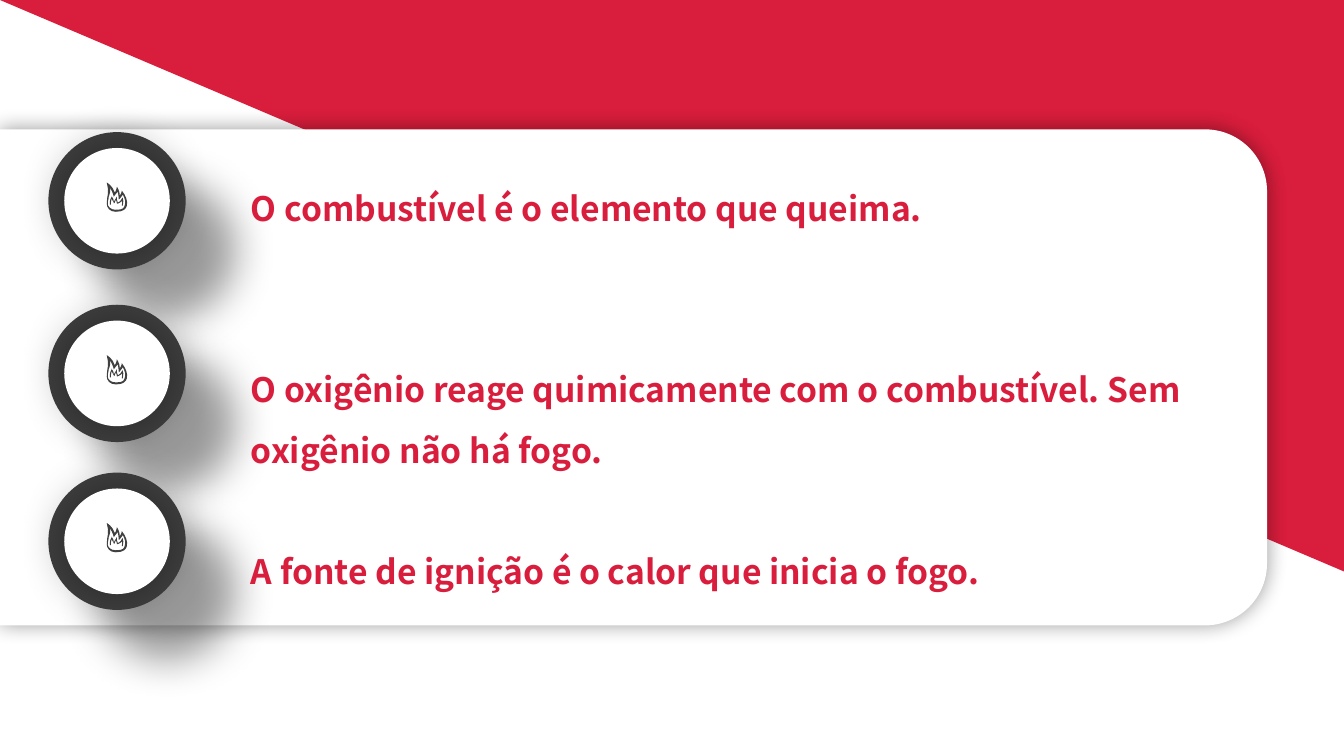
from lxml import etree
from pptx import Presentation
from pptx import util as u
from pptx.dml.color import RGBColor
from pptx.enum import shapes, text
from pptx.oxml import ns

RED, DARK, WHITE = "D91D3C", "404040", "FFFFFF"
FONT = "Noto Sans CJK SC"
WIDTH, HEIGHT = u.Cm(33.87), u.Cm(19.05)
FLAME_UNIT = u.Cm(2.54) / 100

# Each statement with the space above it in points
STATEMENTS = [
    ("O combustível é o elemento que queima.", 0),
    ("O oxigênio reage quimicamente com o combustível. Sem oxigênio não há fogo.", 86.4),
    ("A fonte de ignição é o calor que inicia o fogo.", 43.2),
]
BADGE_TOPS = [3.33, 7.68, 11.91]

# Flame outlines in flame units: pairs are line ends, sixes are curves
FLAME_OUTSIDE = [
    (15, 8), (15, 10, 13, 13, 13, 13), (13, 8, 10, 4, 10, 4),
    (10, 4, 10, 7, 8, 10), (6, 3, 0, 0, 0, 0), (3, 10, 0, 13, 0, 21),
    (0, 25, 3, 29, 9, 29), (17, 29, 19, 26, 20, 23), (21, 18, 19, 13, 15, 8)]
FLAME_INSIDE = [
    (18, 22), (17, 25, 17, 27, 9, 27), (4, 27, 1, 24, 1, 21),
    (1, 18, 2, 16, 2, 14), (3, 11, 4, 9, 3, 5), (6, 9, 7, 14, 7, 14),
    (7, 14, 10, 10, 11, 9), (11, 10, 12, 14, 12, 17), (12, 17, 14, 15, 16, 12),
    (18, 16, 19, 19, 18, 22)]
FLAME_CORE = [
    (16, 15), (15, 16), (14, 18, 13, 19, 11, 20), (11, 19, 10, 18, 10, 16),
    (10, 14), (9, 16), (8, 17, 8, 18, 7, 19), (7, 17, 6, 15, 5, 14), (5, 13),
    (5, 14), (4, 16, 3, 17, 3, 22), (3, 22, 4, 22, 4, 22),
    (4, 18, 5, 17, 5, 15), (5, 17, 6, 18, 7, 20), (7, 21), (8, 20),
    (8, 19, 9, 18, 9, 17), (10, 19, 10, 20, 10, 21), (11, 21),
    (13, 20, 15, 19, 15, 18), (16, 19, 15, 21, 15, 23), (16, 23),
    (16, 21, 17, 19, 16, 16), (16, 16, 16, 15, 16, 15)]


def color(hex_string):
    return RGBColor.from_string(hex_string)


def paint(part, fill):
    part.shadow.inherit = False
    part.fill.solid()
    part.fill.fore_color.rgb = color(fill)
    part.line.fill.background()
    return part


def add_part(slide, kind, left, top, width, height, fill):
    return paint(slide.shapes.add_shape(kind, left, top, width, height), fill)


def cast_shadow(part, blur, distance=0, angle=0):
    effects = part._element.spPr.find(ns.qn("a:effectLst"))
    shadow = etree.SubElement(
        effects, ns.qn("a:outerShdw"), blurRad=str(u.Pt(blur)),
        dist=str(u.Pt(distance)), dir=str(angle * 60000), algn="ctr", rotWithShape="0")
    black = etree.SubElement(shadow, ns.qn("a:srgbClr"), val="000000")
    etree.SubElement(black, ns.qn("a:alpha"), val="40000")


def trace(segments, steps=4):
    """Turn lines and cubic curves into outline points."""
    points = [segments[0]]
    for segment in segments[1:]:
        if len(segment) == 2:
            points.append(segment)
            continue
        controls = [points[-1], segment[:2], segment[2:4], segment[4:]]
        for step in range(1, steps + 1):
            t = step / steps
            weights = [(1 - t) ** 3, 3 * t * (1 - t) ** 2, 3 * t * t * (1 - t), t ** 3]
            points.append(tuple(
                sum(w * c[axis] for w, c in zip(weights, controls)) for axis in (0, 1)))
    return [(x * FLAME_UNIT, y * FLAME_UNIT) for x, y in points]


def add_outline(slide, left, top, contours):
    first, *others = [trace(contour) for contour in contours]
    builder = slide.shapes.build_freeform(*first[0])
    builder.add_line_segments(first[1:], close=True)
    for contour in others:
        builder.move_to(*contour[0])
        builder.add_line_segments(contour[1:], close=True)
    paint(builder.convert_to_shape(left, top), DARK)


def add_backdrop(slide, width, height):
    add_part(slide, shapes.MSO_SHAPE.RECTANGLE, 0, 0, width, height, WHITE)
    # Red wedge with its square corner at the top right
    wedge = add_part(slide, shapes.MSO_SHAPE.RIGHT_TRIANGLE, 0, 0, width, u.Cm(14.4), RED)
    wedge.rotation = 180


def add_panel(slide, left, top, width, height):
    # A quarter turn puts the two rounded corners on the right
    panel = add_part(
        slide, shapes.MSO_SHAPE.ROUND_2_SAME_RECTANGLE,
        left + (width - height) // 2, top + (height - width) // 2, height, width, WHITE)
    panel.rotation = 90
    panel.adjustments[0] = 0.125
    cast_shadow(panel, 15)


def add_badge(slide, left, top, size):
    rim = u.Cm(0.4)
    ring = add_part(slide, shapes.MSO_SHAPE.OVAL, left, top, size, size, DARK)
    cast_shadow(ring, 30, 50, 45)
    disc = add_part(slide, shapes.MSO_SHAPE.OVAL, left + rim, top + rim,
                    size - 2 * rim, size - 2 * rim, WHITE)
    cast_shadow(disc, 35)
    # Flame icon
    flame_left, flame_top = left + u.Cm(1.47), top + u.Cm(1.27)
    add_outline(slide, flame_left, flame_top, [FLAME_INSIDE, FLAME_OUTSIDE])
    add_outline(slide, flame_left, flame_top, [FLAME_CORE])


def add_statements(slide, left, top, width, height):
    body = slide.placeholders[1]
    slide.shapes._spTree.append(body._element)
    body.left, body.top, body.width, body.height = left, top, width, height
    frame = body.text_frame
    frame.word_wrap = True
    frame.auto_size = text.MSO_AUTO_SIZE.NONE
    frame.vertical_anchor = text.MSO_ANCHOR.TOP
    frame.text = "\n".join(statement for statement, _ in STATEMENTS)
    for paragraph, (_, gap) in zip(frame.paragraphs, STATEMENTS):
        paragraph.line_spacing = 1.5
        paragraph.space_before = u.Pt(gap)
        paragraph.font.name = FONT
        paragraph.font.size = u.Pt(24)
        paragraph.font.bold = True
        paragraph.font.color.rgb = color(RED)
        properties = paragraph._p.get_or_add_pPr()
        properties.set("marL", "0")
        properties.set("indent", "0")
        properties.find(ns.qn("a:defRPr")).addprevious(
            etree.Element(ns.qn("a:buNone")))


def build_fire_elements_slide(deck):
    slide = deck.slides.add_slide(deck.slide_layouts[1])
    title = slide.shapes.title._element
    title.getparent().remove(title)
    add_backdrop(slide, WIDTH, HEIGHT)
    add_panel(slide, 0, u.Cm(3.26), u.Cm(31.93), u.Cm(12.5))
    for top in BADGE_TOPS:
        add_badge(slide, u.Cm(1.22), u.Cm(top), u.Cm(3.46))
    add_statements(slide, u.Cm(6.07), u.Cm(4.09), u.Cm(25.17), u.Cm(10.85))


def main():
    deck = Presentation()
    deck.slide_width, deck.slide_height = WIDTH, HEIGHT
    build_fire_elements_slide(deck)
    deck.save("out.pptx")


if __name__ == "__main__":
    main()
